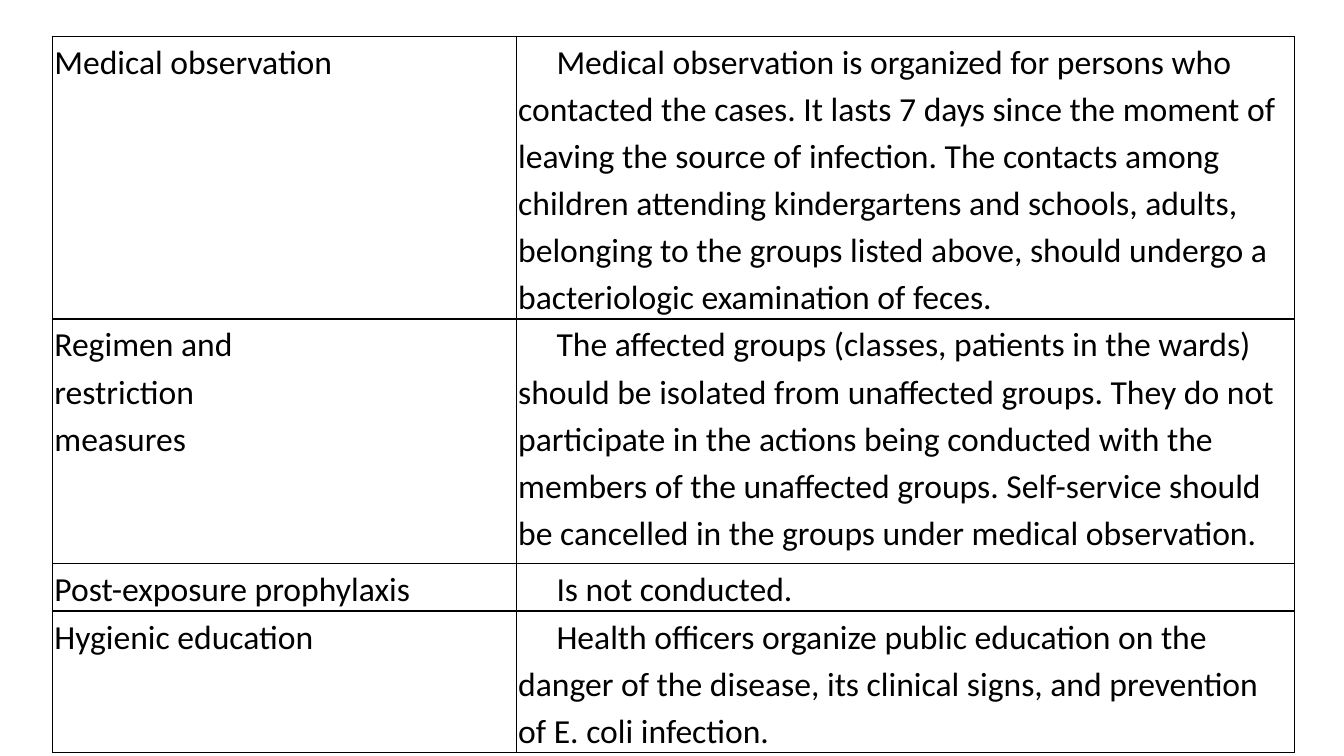
from lxml import etree
from pptx import Presentation
from pptx.dml.color import RGBColor
from pptx.enum.text import MSO_ANCHOR, PP_ALIGN
from pptx.oxml.ns import qn
from pptx.util import Inches, Pt

TOP = MSO_ANCHOR.TOP
LEFT = PP_ALIGN.LEFT

MEASURES = [
    (["Medical observation"],
     "Medical observation is organized for persons who contacted the cases. "
     "It lasts 7 days since the moment of leaving the source of infection. "
     "The contacts among children attending kindergartens and schools, adults, "
     "belonging to the groups listed above, should undergo a bacteriologic "
     "examination of feces."),
    (["Regimen and", "restriction", "measures"],
     "The affected groups (classes, patients in the wards) should be isolated "
     "from unaffected groups. They do not participate in the actions being "
     "conducted with the members of the unaffected groups. Self-service should "
     "be cancelled in the groups under medical observation."),
    (["Post-exposure prophylaxis"], "Is not conducted."),
    (["Hygienic education"],
     "Health officers organize public education on the danger of the disease, "
     "its clinical signs, and prevention of E. coli infection."),
]
COLORS = {"ink": "000000", "paper": "FFFFFF"}
COLUMN_WIDTHS = [4.6, 7.72]
ROW_HEIGHTS = [2.67, 2.43, 0.38, 1.14]
TABLE_LEFT, TABLE_TOP = 0.52, 0.36
FIRST_LINE_INDENT = 0.38


def write_text(cell, lines, size=24, font="Calibri", color="ink", indent=0):
    cell.margin_left = cell.margin_right = Inches(0.02)
    cell.margin_top = cell.margin_bottom = 0
    cell.vertical_anchor = TOP
    cell.text = "\n".join(lines)
    for paragraph in cell.text_frame.paragraphs:
        paragraph.alignment = LEFT
        paragraph.line_spacing = 1.15
        paragraph._p.get_or_add_pPr().set("indent", str(Inches(indent)))
        for run in paragraph.runs:
            run.font.size = Pt(size)
            run.font.name = font
            run.font.bold = False
            run.font.color.rgb = RGBColor.from_string(COLORS[color])


def draw_borders(cell):
    properties = cell._tc.get_or_add_tcPr()
    for position, side in enumerate(("lnL", "lnR", "lnT", "lnB")):
        border = etree.Element(qn(f"a:{side}"), w=str(Pt(1)))
        fill = etree.SubElement(border, qn("a:solidFill"))
        etree.SubElement(fill, qn("a:srgbClr"), val=COLORS["ink"])
        properties.insert(position, border)


def main():
    deck = Presentation()
    deck.slide_width, deck.slide_height = Inches(13.33), Inches(7.5)
    slide = deck.slides.add_slide(deck.slide_layouts[6])
    measures_table = slide.shapes.add_table(
        len(MEASURES), len(COLUMN_WIDTHS), Inches(TABLE_LEFT), Inches(TABLE_TOP),
        Inches(sum(COLUMN_WIDTHS)), Inches(sum(ROW_HEIGHTS))).table
    measures_table.first_row = measures_table.horz_banding = False
    for column, width in zip(measures_table.columns, COLUMN_WIDTHS):
        column.width = Inches(width)
    for row, height, (measure, details) in zip(
            measures_table.rows, ROW_HEIGHTS, MEASURES):
        row.height = Inches(height)
        measure_cell, details_cell = row.cells
        write_text(measure_cell, measure)
        write_text(details_cell, [details], indent=FIRST_LINE_INDENT)
        for cell in row.cells:
            cell.fill.solid()
            cell.fill.fore_color.rgb = RGBColor.from_string(COLORS["paper"])
            draw_borders(cell)
    deck.save("out.pptx")


if __name__ == "__main__":
    main()
